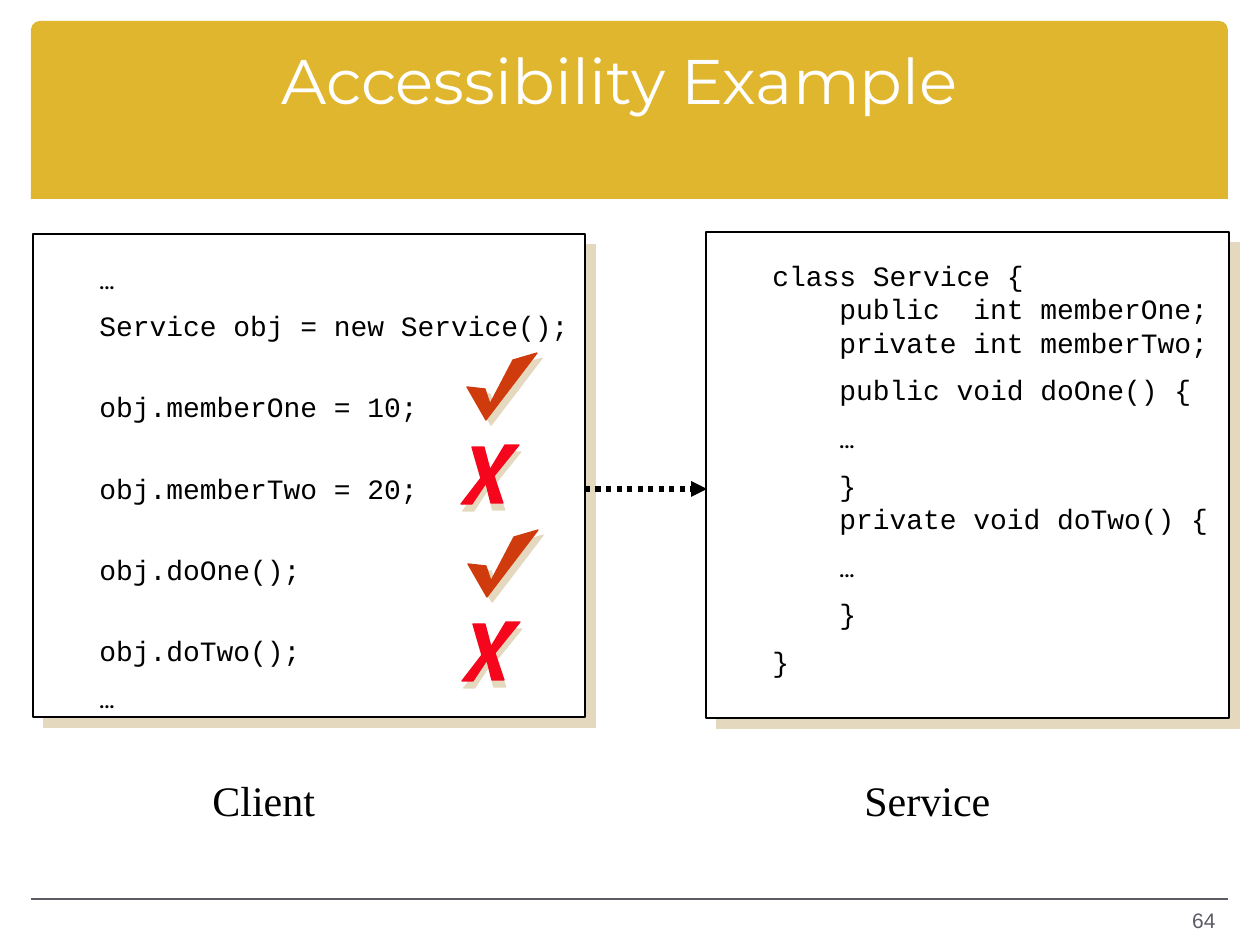
from lxml.etree import SubElement
from pptx import Presentation
from pptx.dml.color import RGBColor
from pptx.enum.dml import MSO_LINE_DASH_STYLE as Dash
from pptx.enum.shapes import MSO_CONNECTOR as Connector, MSO_SHAPE as Shape
from pptx.enum.text import MSO_ANCHOR as Anchor, MSO_AUTO_SIZE as AutoSize, PP_ALIGN as Align
from pptx.oxml.ns import qn
from pptx.util import Emu, Pt

PX = 914400 / 126
COLORS = {
    "band": "E0B62E", "grey": "5D5C64", "white": "FFFFFF", "black": "000000",
    "shadow": "E4D9BE", "check": "CF3B0D", "cross": "F6061D",
}
CODE_FONT, ELLIPSIS_FONT = "Courier New", "Karla"
CODE_LEFT, CODE_STEP = 63, 67

# Each code paragraph: text, indent level, first-line level, line spacing
CLIENT_CODE = [
    ("…", 0, 0, 1),
    ("Service obj = new Service();", 0, 0, 1),
    ("obj.memberOne = 10;", 0, 0, 2),
    ("obj.memberTwo = 20;", 0, 0, 2),
    ("obj.doOne();", 0, 0, 2),
    ("obj.doTwo();", 0, 0, 2),
    ("…", 0, 0, 1),
]
SERVICE_CODE = [
    ("class Service {\vpublic  int memberOne;\vprivate int memberTwo;", 1, 0, 1),
    ("public void doOne() {", 1, 1, 1),
    ("…", 1, 1, 1),
    ("}\vprivate void doTwo() {", 1, 1, 1),
    ("…", 1, 1, 1),
    ("}", 1, 1, 1),
    ("}", 0, 0, 1),
]
# Each panel: frame, code area, code
PANELS = [
    ((706, 232, 523, 486), (697, 252, 532, 451), SERVICE_CODE),
    ((33, 234, 552, 483), (24, 255, 561, 534), CLIENT_CODE),
]
LABELS = [("Client", (200, 768, 134, 63)), ("Service", (852, 768, 158, 63))]

# Each mark: outline, colour, shadow distance in points, shadow angle
MARKS = [
    ([(467, 387), (485, 389), (490, 404), (513, 360), (537, 353), (486, 420)],
     "check", 4.2, 45),
    ([(472, 447), (484, 447), (490, 470), (505, 445), (519, 445), (494, 476),
      (503, 503), (491, 503), (486, 483), (472, 504), (461, 504), (481, 478)],
     "cross", 4.1, 76),
]
MARK_REPEATS = [(0, 0), (1, 177)]


def px(*lengths):
    return [Emu(round(length * PX)) for length in lengths]


def color(name):
    return RGBColor.from_string(COLORS[name])


def paint(shape, fill, line=None):
    shape.shadow.inherit = False
    shape.fill.solid()
    shape.fill.fore_color.rgb = color(fill)
    if line:
        shape.line.color.rgb = color(line)
        shape.line.width = Pt(0.75)
    else:
        shape.line.fill.background()


def cast_shadow(shape, distance, angle):
    effects = shape.element.spPr.find(qn("a:effectLst"))
    shadow = SubElement(effects, qn("a:outerShdw"), dist=str(Pt(distance)),
                        dir=str(angle * 60000), algn="ctr", rotWithShape="0")
    SubElement(shadow, qn("a:srgbClr"), val=COLORS["shadow"])


def write(para, text, font, size, ink="black", align=None):
    para.text = text
    para.alignment = align
    para.font.name = font
    for span in para.runs:
        span.font.name = font
        span.font.size = Pt(size)
        span.font.color.rgb = color(ink)


def add_text_box(page, area, wrap=True, anchor=Anchor.TOP, fit=AutoSize.NONE):
    frame = page.shapes.add_textbox(*px(*area)).text_frame
    frame.word_wrap = wrap
    frame.vertical_anchor = anchor
    frame.auto_size = fit
    return frame


def add_line(page, ends, ink, width):
    line = page.shapes.add_connector(Connector.STRAIGHT, *px(*ends))
    line.line.color.rgb = color(ink)
    line.line.width = Pt(width)
    SubElement(line.element.spPr, qn("a:effectLst"))
    return line


def add_code(page, area, code):
    frame = add_text_box(page, area, fit=AutoSize.SHAPE_TO_FIT_TEXT)
    for index, (text, level, first, spacing) in enumerate(code):
        para = frame.add_paragraph() if index else frame.paragraphs[0]
        write(para, text, ELLIPSIS_FONT if text == "…" else CODE_FONT, 16)
        para.space_before = Pt(8)
        para.line_spacing = float(spacing)
        left, indent = px(CODE_LEFT + level * CODE_STEP, (first - level) * CODE_STEP)
        properties = para._p.get_or_add_pPr()
        properties.set("marL", str(left))
        properties.set("indent", str(indent))


def add_header_and_footer(page):
    band = page.shapes.add_shape(Shape.ROUND_2_SAME_RECTANGLE, *px(31, 21, 1197, 178))
    band.adjustments[0], band.adjustments[1] = 0.05, 0
    paint(band, "band")

    title = page.shapes.title
    band.element.addnext(title.element)
    title.left, title.top, title.width, title.height = px(84, 21, 1071, 116)
    title.text_frame.vertical_anchor = Anchor.MIDDLE
    write(title.text_frame.paragraphs[0], "Accessibility Example", "Montserrat", 36,
          ink="white", align=Align.CENTER)

    add_line(page, (31, 899, 1228, 899), "grey", 1)
    number = add_text_box(page, (935, 898, 293, 44), anchor=Anchor.MIDDLE)
    write(number.paragraphs[0], "64", "Arial", 12, ink="grey", align=Align.RIGHT)


def main():
    deck = Presentation()
    deck.slide_width, deck.slide_height = px(1260, 945)
    page = deck.slides.add_slide(deck.slide_layouts[5])
    add_header_and_footer(page)

    for area, code_area, code in PANELS:
        panel = page.shapes.add_shape(Shape.RECTANGLE, *px(*area))
        paint(panel, "white", line="black")
        cast_shadow(panel, 8.5, 45)
        add_code(page, code_area, code)

    for across, down in MARK_REPEATS:
        for outline, ink, distance, angle in MARKS:
            points = [(x + across, y + down) for x, y in outline]
            builder = page.shapes.build_freeform(*points[0], scale=PX)
            builder.add_line_segments(points[1:], close=True)
            mark = builder.convert_to_shape()
            paint(mark, ink, line=ink)
            cast_shadow(mark, distance, angle)

    for text, area in LABELS:
        label = add_text_box(page, area, wrap=False)
        write(label.paragraphs[0], text, "Times New Roman", 24, align=Align.LEFT)

    arrow = add_line(page, (585, 489, 707, 489), "black", 3)
    arrow.line.dash_style = Dash.ROUND_DOT
    SubElement(arrow.element.spPr.find(qn("a:ln")), qn("a:tailEnd"), type="triangle")

    deck.save("out.pptx")


if __name__ == "__main__":
    main()
